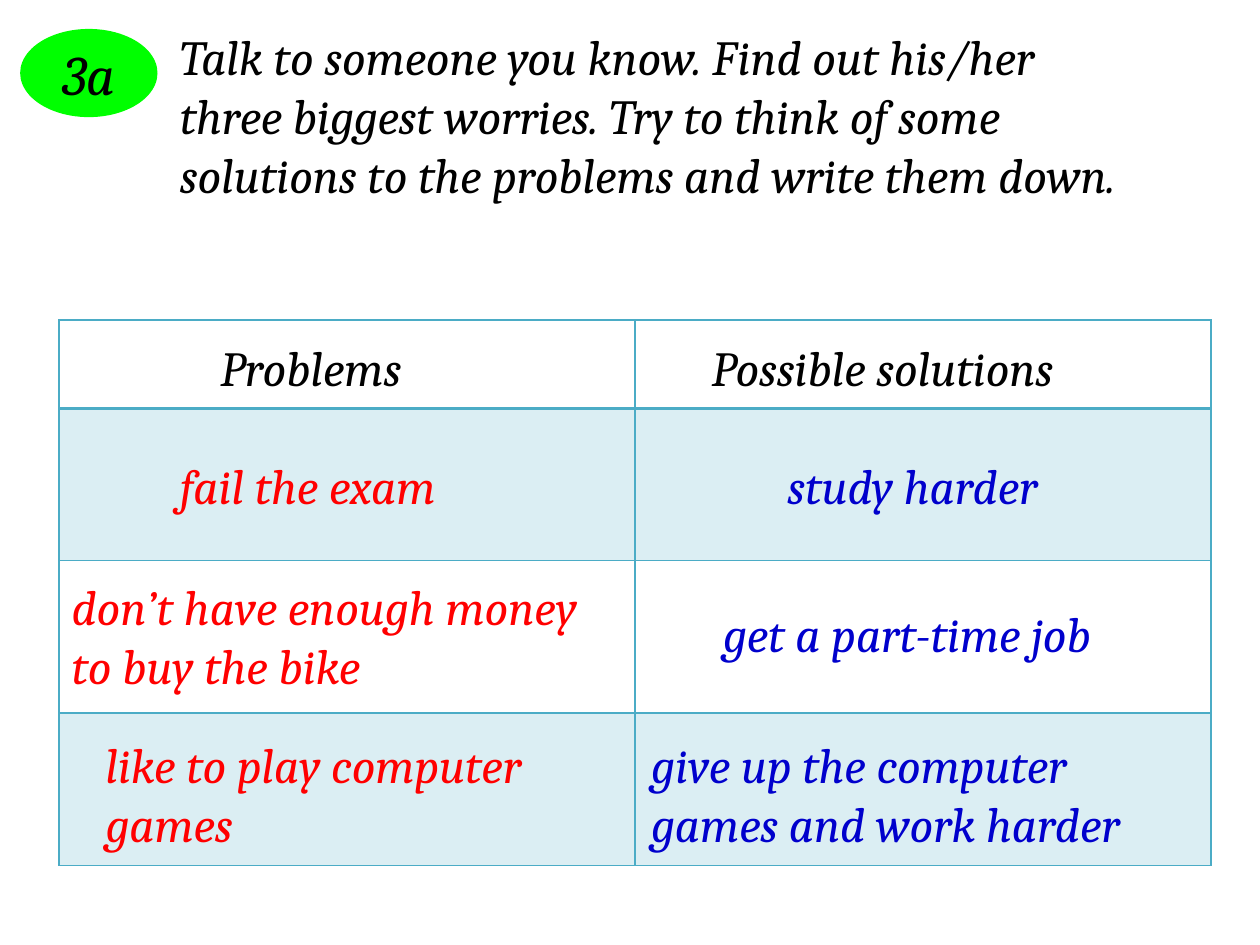
import pptx
import pptx.dml.color
import pptx.enum.shapes
import pptx.enum.text
import pptx.oxml
import pptx.oxml.ns
import pptx.util
from pptx.util import Inches

FONT = "Cambria"
BLACK, RED, BLUE = "000000", "FF0000", "0000CC"
GREEN, TEAL = "00FF00", "4BACC6"

INSTRUCTION = [
    "Talk to someone you know. Find out his/her",
    "three biggest worries. Try to think of some",
    "solutions to the problems and write them down.",
]

# Lines, colour, (left, top, width, height) of the labels over the table
LABELS = [
    (["Problems"], BLACK, (1.65, 2.63, 1.86, 0.57)),
    (["Possible solutions"], BLACK, (5.55, 2.63, 3.3, 0.57)),
    (["fail the exam"], RED, (1.33, 3.57, 2.47, 0.57)),
    (["study harder"], BLUE, (6.15, 3.57, 2.49, 0.57)),
    (["don’t have enough money", "to buy the bike"], RED, (0.47, 4.53, 4.7, 1.04)),
    (["get a part-time job"], BLUE, (5.64, 4.74, 3.5, 0.57)),
    (["like to play computer", "games"], RED, (0.74, 5.78, 4.03, 1.04)),
    (["give up the computer", "games and work harder"], BLUE, (5.07, 5.78, 4.46, 1.04)),
]

TABLE_LEFT, TABLE_TOP = 0.47, 2.54
COLUMN_WIDTHS = [4.57, 4.57]
ROW_HEIGHTS = [0.7, 1.21, 1.21, 1.21]


def color(hex_string):
    return pptx.dml.color.RGBColor.from_string(hex_string)


def write_lines(text_frame, lines, size, text_color):
    for index, line in enumerate(lines):
        paragraph = text_frame.paragraphs[0] if index == 0 else text_frame.add_paragraph()
        run = paragraph.add_run()
        run.text = line
        run.font.name = FONT
        run.font.size = pptx.util.Pt(size)
        run.font.italic = True
        run.font.color.rgb = color(text_color)


def add_text(slide, lines, text_color, box, wrap=False):
    text_frame = slide.shapes.add_textbox(*map(Inches, box)).text_frame
    text_frame.word_wrap = wrap
    text_frame.auto_size = pptx.enum.text.MSO_AUTO_SIZE.SHAPE_TO_FIT_TEXT
    write_lines(text_frame, lines, 28, text_color)


def style_cell(cell, row):
    properties = cell._tc.get_or_add_tcPr()
    # Borders come before the fill; the header rule is thicker
    for side in ("L", "R", "T", "B"):
        header_rule = (row == 0 and side == "B") or (row == 1 and side == "T")
        width = pptx.util.Pt(2 if header_rule else 1)
        properties.append(pptx.oxml.parse_xml(
            f'<a:ln{side} {pptx.oxml.ns.nsdecls("a")} w="{width}"><a:solidFill>'
            f'<a:srgbClr val="{TEAL}"/></a:solidFill></a:ln{side}>'))
    if row % 2:
        cell.fill.solid()
        cell.fill.fore_color.rgb = color(TEAL)
        tint = properties.find(pptx.oxml.ns.qn("a:solidFill"))[0]
        tint.append(pptx.oxml.parse_xml(
            f'<a:alpha {pptx.oxml.ns.nsdecls("a")} val="20000"/>'))
    else:
        cell.fill.background()


def add_grid(slide):
    table = slide.shapes.add_table(
        len(ROW_HEIGHTS), len(COLUMN_WIDTHS), Inches(TABLE_LEFT), Inches(TABLE_TOP),
        Inches(sum(COLUMN_WIDTHS)), Inches(sum(ROW_HEIGHTS))).table
    for column, width in zip(table.columns, COLUMN_WIDTHS):
        column.width = Inches(width)
    for index, height in enumerate(ROW_HEIGHTS):
        table.rows[index].height = Inches(height)
        for cell in table.rows[index].cells:
            style_cell(cell, index)


def add_badge(slide):
    badge = slide.shapes.add_shape(
        pptx.enum.shapes.MSO_SHAPE.OVAL, *map(Inches, (0.16, 0.23, 1.09, 0.7)))
    badge.shadow.inherit = False
    badge.fill.solid()
    badge.fill.fore_color.rgb = color(GREEN)
    badge.line.fill.background()
    badge.text_frame.vertical_anchor = pptx.enum.text.MSO_ANCHOR.MIDDLE
    write_lines(badge.text_frame, ["3a"], 32, BLACK)
    badge.text_frame.paragraphs[0].alignment = pptx.enum.text.PP_ALIGN.CENTER


def main():
    presentation = pptx.Presentation()
    presentation.slide_width = Inches(10)
    presentation.slide_height = Inches(7.5)
    slide = presentation.slides.add_slide(presentation.slide_layouts[6])

    # Heading
    add_badge(slide)
    add_text(slide, INSTRUCTION, BLACK, (1.33, 0.16, 8.36, 1.99), wrap=True)

    # Table with its labels
    add_grid(slide)
    for lines, text_color, box in LABELS:
        add_text(slide, lines, text_color, box)

    presentation.save("out.pptx")


if __name__ == "__main__":
    main()
